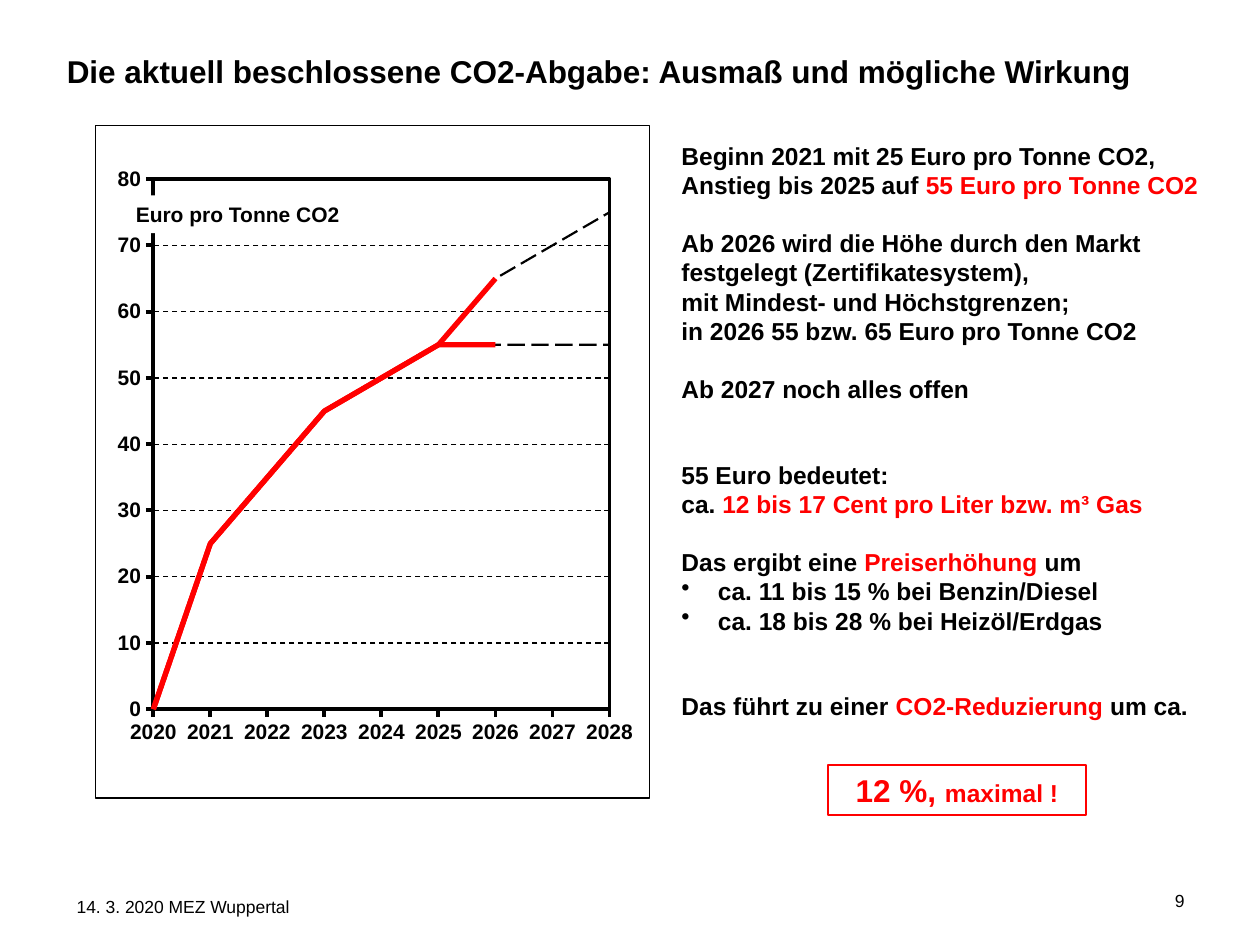
"""Build the slide on the CO2 levy, its size and its possible effect."""
import dataclasses
import typing

import lxml.etree
import pptx
import pptx.chart.data
import pptx.dml.color
import pptx.enum.chart
import pptx.enum.dml
import pptx.enum.shapes
import pptx.enum.text
import pptx.oxml
import pptx.oxml.ns
import pptx.util

BLACK = pptx.dml.color.RGBColor(0, 0, 0)
RED = pptx.dml.color.RGBColor(255, 0, 0)
WHITE = pptx.dml.color.RGBColor(255, 255, 255)
SLIDE_WIDTH = pptx.util.Inches(10)
SLIDE_HEIGHT = pptx.util.Inches(7.5)
FONT = "Arial"
LINE_PITCH = 16.1
BULLET_INDENT = pptx.util.Inches(0.29)
ANCHOR = pptx.enum.text.MSO_ANCHOR
DASH = pptx.enum.dml.MSO_LINE


class Area(typing.NamedTuple):
    """Left, top, width and height in percent of the slide's size."""

    left: float
    top: float
    width: float
    height: float


class Run(typing.NamedTuple):
    """A piece of text with its colour and size."""

    text: str
    color: pptx.dml.color.RGBColor = BLACK
    size: float = 14


@dataclasses.dataclass(frozen=True)
class Line:
    """A paragraph with the number of free lines above it."""

    runs: tuple[Run, ...]
    gap: int = 0
    bullet: bool = False


@dataclasses.dataclass(frozen=True)
class PricePath:
    """Prices from 2026 on and the stroke that shows them."""

    outlook: tuple[int | None, ...]
    color: pptx.dml.color.RGBColor
    width: float
    dash: typing.Any = DASH.SOLID


YEARS = [str(year) for year in range(2020, 2029)]
AGREED_PRICES = (0, 25, 35, 45, 50, 55)
PRICE_PATHS = (
    PricePath((55, 55, 55), BLACK, 1.25, DASH.LONG_DASH),
    PricePath((55, None, None), RED, 3),
    PricePath((65, 70, 75), BLACK, 1.25, DASH.LONG_DASH),
    PricePath((65, None, None), RED, 3),
)
EXPLANATION = (
    Line((Run("Beginn 2021 mit 25 Euro pro Tonne CO2,"),)),
    Line((Run("Anstieg bis 2025 auf "), Run("55 Euro pro Tonne CO2", RED))),
    Line((Run("Ab 2026 wird die Höhe durch den Markt festgelegt (Zertifikatesystem),"),), gap=1),
    Line((Run("mit Mindest- und Höchstgrenzen;"),)),
    Line((Run("in 2026 55 bzw. 65 Euro pro Tonne CO2"),)),
    Line((Run("Ab 2027 noch alles offen"),), gap=1),
    Line((Run("55 Euro bedeutet:"),), gap=2),
    Line((Run("ca. "), Run("12 bis 17 Cent pro Liter bzw. m³ Gas", RED))),
    Line((Run("Das ergibt eine "), Run("Preiserhöhung", RED), Run(" um")), gap=1),
    Line((Run("ca. 11 bis 15 % bei Benzin/Diesel"),), bullet=True),
    Line((Run("ca. 18 bis 28 % bei Heizöl/Erdgas"),), bullet=True),
    Line((Run("Das führt zu einer "), Run("CO2-Reduzierung", RED), Run(" um ca.")), gap=2),
)


def to_lengths(area: Area) -> tuple[int, int, int, int]:
    """Turn shares of the slide into lengths."""
    totals = (SLIDE_WIDTH, SLIDE_HEIGHT) * 2
    return tuple(round(total * share / 100) for total, share in zip(totals, area))


def set_font(font, *, size: float, color=BLACK, bold: bool = True) -> None:
    """Format a font."""
    font.name = FONT
    font.size = pptx.util.Pt(size)
    font.bold = bold
    font.color.rgb = color


def write_lines(shape, lines: typing.Iterable[Line], *, bold: bool = True, wrap: bool = True,
                anchor=ANCHOR.TOP, alignment=pptx.enum.text.PP_ALIGN.LEFT) -> None:
    """Fill a shape with formatted paragraphs."""
    frame = shape.text_frame
    frame.word_wrap = wrap
    frame.auto_size = pptx.enum.text.MSO_AUTO_SIZE.NONE
    frame.vertical_anchor = anchor
    for index, line in enumerate(lines):
        paragraph = frame.add_paragraph() if index else frame.paragraphs[0]
        paragraph.alignment = alignment
        paragraph.space_before = pptx.util.Pt(line.gap * LINE_PITCH)
        for piece in line.runs:
            run = paragraph.add_run()
            run.text = piece.text
            set_font(run.font, size=piece.size, color=piece.color, bold=bold)
        if line.bullet:
            properties = paragraph._p.get_or_add_pPr()
            properties.set("marL", str(BULLET_INDENT))
            properties.set("indent", str(-BULLET_INDENT))
            bullet = lxml.etree.SubElement(properties, pptx.oxml.ns.qn("a:buChar"))
            bullet.set("char", "•")


def add_text(slide, area: Area, lines: typing.Iterable[Line], **text_format) -> None:
    """Add a text box."""
    write_lines(slide.shapes.add_textbox(*to_lengths(area)), lines, **text_format)


def add_box(slide, area: Area, line: Line, *, fill=None, border=None, **text_format) -> None:
    """Add a rectangle with text."""
    shape = slide.shapes.add_shape(pptx.enum.shapes.MSO_SHAPE.RECTANGLE, *to_lengths(area))
    shape.shadow.inherit = False
    shape.fill.background()
    shape.line.fill.background()
    if fill is not None:
        shape.fill.solid()
        shape.fill.fore_color.rgb = fill
    if border is not None:
        set_stroke(shape.line, border, 1.25)
    write_lines(shape, [line], **text_format)


def set_stroke(line, color, width: float, dash=DASH.SOLID) -> None:
    """Format a line."""
    line.color.rgb = color
    line.width = pptx.util.Pt(width)
    line.dash_style = dash


def make_part(tag: str, content: str = "", attributes: str = ""):
    """Return a chart element."""
    namespaces = pptx.oxml.ns.nsdecls("c", "a")
    return pptx.oxml.parse_xml(f"<c:{tag} {namespaces} {attributes}>{content}</c:{tag}>")


def make_frame(width: float):
    """Return chart properties with a black outline and no fill."""
    return make_part("spPr", f'<a:noFill/><a:ln w="{pptx.util.Pt(width)}"><a:solidFill>'
                             f'<a:srgbClr val="{BLACK}"/></a:solidFill></a:ln>')


def set_plot_layout(plot_area, **shares: float) -> None:
    """Fix the inner plot area and start the lines on the value axis."""
    for element in plot_area.xpath("c:layout | c:valAx/c:crossBetween"):
        element.getparent().remove(element)
    settings = {"layoutTarget": "inner", "xMode": "edge", "yMode": "edge", **shares}
    content = "".join(f'<c:{name} val="{value}"/>' for name, value in settings.items())
    plot_area.insert(0, make_part("layout", f"<c:manualLayout>{content}</c:manualLayout>"))
    crossing = plot_area.xpath("c:valAx/c:crossAx | c:valAx/c:crosses")[-1]
    crossing.addnext(make_part("crossBetween", attributes='val="midCat"'))


def add_price_chart(slide, area: Area) -> None:
    """Add the line chart of CO2 prices."""
    data = pptx.chart.data.CategoryChartData()
    data.categories = YEARS
    for number, price_path in enumerate(PRICE_PATHS, start=1):
        data.add_series(f"Series {number}", AGREED_PRICES + price_path.outlook)
    chart = slide.shapes.add_chart(
        pptx.enum.chart.XL_CHART_TYPE.LINE, *to_lengths(area), data).chart
    chart.has_legend = chart.has_title = False
    set_font(chart.font, size=10)
    chart.plots[0].vary_by_categories = False
    for series, price_path in zip(chart.plots[0].series, PRICE_PATHS):
        series.smooth = False
        series.marker.style = pptx.enum.chart.XL_MARKER_STYLE.NONE
        set_stroke(series.format.line, price_path.color, price_path.width, price_path.dash)
    for axis in (chart.category_axis, chart.value_axis):
        axis.major_tick_mark = pptx.enum.chart.XL_TICK_MARK.OUTSIDE
        axis.minor_tick_mark = pptx.enum.chart.XL_TICK_MARK.NONE
        set_font(axis.tick_labels.font, size=12)
        set_stroke(axis.format.line, BLACK, 2.25)
    chart.value_axis.minimum_scale, chart.value_axis.maximum_scale = 0, 80
    chart.value_axis.major_unit = 10
    set_stroke(chart.value_axis.major_gridlines.format.line, BLACK, 0.75, DASH.DASH)
    plot_area = chart.element.find(f".//{pptx.oxml.ns.qn('c:plotArea')}")
    set_plot_layout(plot_area, x=0.105, y=0.08, w=0.823, h=0.788)
    plot_area.append(make_frame(2.25))
    plot_area.getparent().addnext(make_frame(0.75))


def main() -> None:
    """Build and save the presentation."""
    presentation = pptx.Presentation()
    presentation.slide_width, presentation.slide_height = SLIDE_WIDTH, SLIDE_HEIGHT
    slide = presentation.slides.add_slide(presentation.slide_layouts[5])
    title = slide.shapes.title
    title.left, title.top, title.width, title.height = to_lengths(Area(4.3, 4.8, 86.6, 5.33))
    heading = Run("Die aktuell beschlossene CO2-Abgabe: Ausmaß und mögliche Wirkung", size=18)
    write_lines(title, [Line((heading,))], wrap=False)
    add_text(slide, Area(53.1, 14.27, 43.3, 70.4), EXPLANATION)
    add_price_chart(slide, Area(7.5, 13.2, 44.1, 71.33))
    result = Line((Run("12 %, ", RED, 18), Run("maximal !", RED)))
    add_box(slide, Area(65.7, 80.93, 20.5, 5.33), result, border=RED, anchor=ANCHOR.MIDDLE,
            alignment=pptx.enum.text.PP_ALIGN.CENTER)
    add_box(slide, Area(9.8, 20.67, 18.4, 4), Line((Run("Euro pro Tonne CO2", size=12),)),
            fill=WHITE, wrap=False)
    add_text(slide, Area(5.1, 94.13, 71.7, 3.6),
             [Line((Run("14. 3. 2020 MEZ Wuppertal", size=10),))], bold=False)
    add_text(slide, Area(71.7, 92.67, 23.3, 5.33), [Line((Run("9", size=10),))], bold=False,
             anchor=ANCHOR.MIDDLE, alignment=pptx.enum.text.PP_ALIGN.RIGHT)
    presentation.save("out.pptx")


if __name__ == "__main__":
    main()
